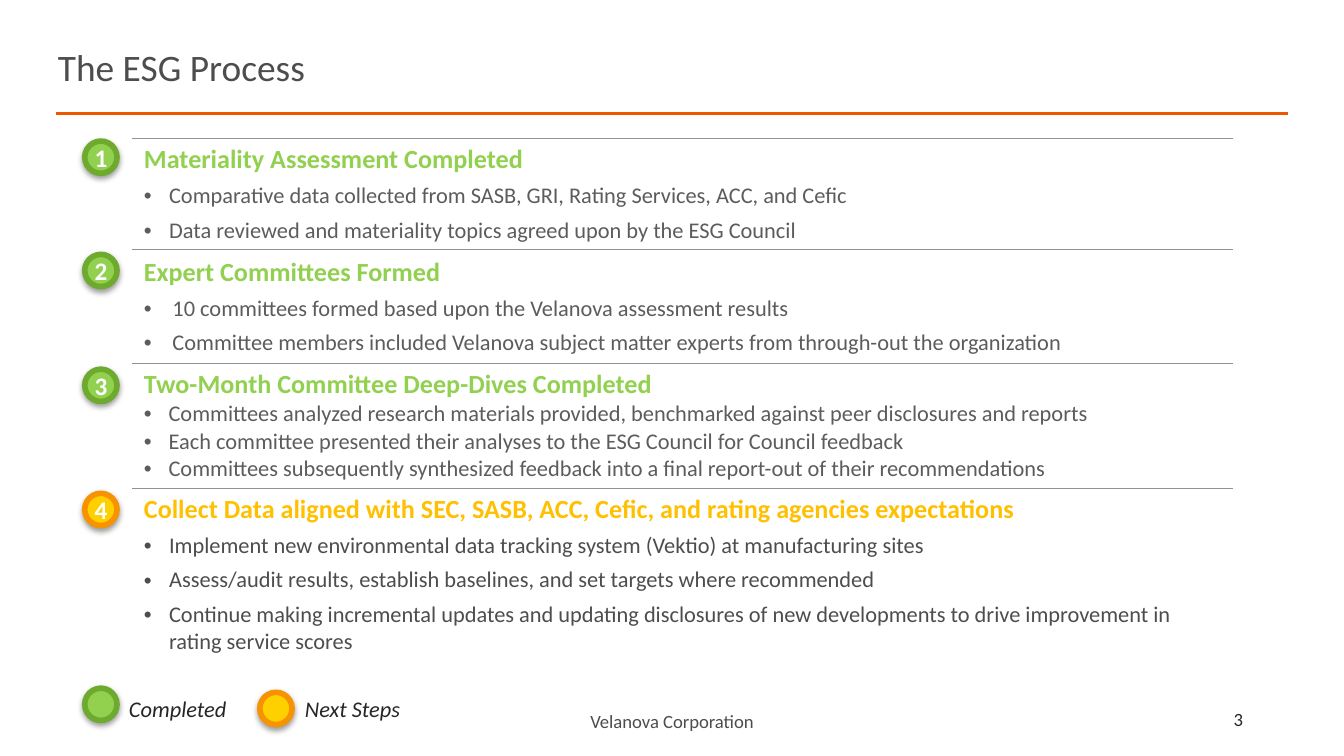
"""Build the ESG process slide with its four steps and legend."""
from dataclasses import dataclass

from lxml.etree import SubElement
from pptx import Presentation
from pptx.dml.color import RGBColor
from pptx.enum.shapes import MSO_CONNECTOR as Connector, MSO_SHAPE as Shape
from pptx.enum.text import MSO_ANCHOR as Anchor, PP_ALIGN as Align
from pptx.oxml import parse_xml
from pptx.oxml.ns import nsdecls, qn
from pptx.util import Pt

GREEN = RGBColor(0x92, 0xD0, 0x50)
DARK_GREEN = RGBColor(0x6E, 0xAA, 0x2E)
YELLOW = RGBColor(0xFF, 0xD0, 0x00)
ORANGE = RGBColor(0xF7, 0x93, 0x00)
AMBER = RGBColor(0xFF, 0xC0, 0x00)
RED_ORANGE = RGBColor(0xF0, 0x55, 0x00)
WHITE = RGBColor(0xFF, 0xFF, 0xFF)
BLACK = RGBColor(0x26, 0x26, 0x26)
DARK_GRAY = RGBColor(0x4D, 0x4D, 0x4D)
GRAY = RGBColor(0x5C, 0x5C, 0x5C)
RULE_GRAY = RGBColor(0x92, 0x92, 0x92)
FONT = "Calibri"
BADGE_LEFT = 45.4
BADGE_SIZE = 17.3


@dataclass(frozen=True)
class Status:
    fill: RGBColor
    outline: RGBColor
    heading: RGBColor


@dataclass(frozen=True)
class Step:
    heading: str
    bullets: tuple[str, ...]
    status: Status
    height: float
    badge_top: float
    indent: float = 13.5
    gap: float = 3.8
    color: RGBColor = GRAY
    anchor: Anchor = Anchor.TOP


@dataclass(frozen=True)
class LegendEntry:
    label: str
    status: Status
    left: float
    top: float
    label_left: float
    label_width: float


COMPLETED = Status(GREEN, DARK_GREEN, GREEN)
NEXT = Status(YELLOW, ORANGE, AMBER)
STEPS = (
    Step("Materiality Assessment Completed",
         ("Comparative data collected from SASB, GRI, Rating Services, ACC, and Cefic",
          "Data reviewed and materiality topics agreed upon by the ESG Council"),
         COMPLETED, 59, 75.6, anchor=Anchor.MIDDLE),
    Step("Expert Committees Formed",
         ("10 committees formed based upon the Velanova assessment results",
          "Committee members included Velanova subject matter experts from through-out the organization"),
         COMPLETED, 61, 136.3, indent=15.3, anchor=Anchor.MIDDLE),
    Step("Two-Month Committee Deep-Dives Completed",
         ("Committees analyzed research materials provided, benchmarked against peer disclosures and reports",
          "Each committee presented their analyses to the ESG Council for Council feedback",
          "Committees subsequently synthesized feedback into a final report-out of their recommendations"),
         COMPLETED, 66, 197.8, indent=13.2, gap=0),
    Step("Collect Data aligned with SEC, SASB, ACC, Cefic, and rating agencies expectations",
         ("Implement new environmental data tracking system (Vektio) at manufacturing sites",
          "Assess/audit results, establish baselines, and set targets where recommended",
          "Continue making incremental updates and updating disclosures of new developments"
          " to drive improvement in rating service scores"),
         NEXT, 92, 264.3, color=DARK_GRAY),
)
LEGEND = (
    LegendEntry("Completed", COMPLETED, BADGE_LEFT, 368.7, 62, 67),
    LegendEntry("Next Steps", NEXT, 139.2, 370.9, 156.3, 66),
)


def write(paragraph, text: str, *, size: float, color: RGBColor, bold: bool = False,
          italic: bool = False, align: Align = Align.LEFT, before: float = 0,
          indent: float = 0) -> None:
    paragraph.alignment = align
    paragraph.space_before = Pt(before)
    if indent:
        properties = paragraph._p.get_or_add_pPr()
        properties.set("marL", str(Pt(indent)))
        properties.set("indent", str(-Pt(indent)))
        SubElement(properties, qn("a:buFont")).set("typeface", "Arial")
        SubElement(properties, qn("a:buChar")).set("char", "•")
    run = paragraph.add_run()
    run.text = text
    font = run.font
    font.name, font.size, font.bold, font.italic = FONT, Pt(size), bold, italic
    font.color.rgb = color


def set_frame(frame, inset: float = 0, wrap: bool = True) -> None:
    frame.margin_left = frame.margin_right = Pt(inset * 2)
    frame.margin_top = frame.margin_bottom = Pt(inset)
    frame.vertical_anchor = Anchor.MIDDLE
    frame.word_wrap = wrap


def add_label(slide, text: str, left: float, top: float, width: float, height: float,
              inset: float = 0, wrap: bool = True, **text_format) -> None:
    box = slide.shapes.add_textbox(Pt(left), Pt(top), Pt(width), Pt(height))
    set_frame(box.text_frame, inset, wrap)
    write(box.text_frame.paragraphs[0], text, **text_format)


def add_badge(slide, left: float, top: float, status: Status, number: str = "") -> None:
    badge = slide.shapes.add_shape(Shape.OVAL, Pt(left), Pt(top), Pt(BADGE_SIZE), Pt(BADGE_SIZE))
    badge.fill.solid()
    badge.fill.fore_color.rgb = status.fill
    badge.line.color.rgb = status.outline
    badge.line.width = Pt(3)
    badge.shadow.inherit = False
    badge._element.spPr.find(qn("a:effectLst")).append(parse_xml(
        f'<a:outerShdw {nsdecls("a")} blurRad="{Pt(3.1)}" dist="{Pt(1.6)}" dir="5400000" '
        'rotWithShape="0"><a:srgbClr val="000000"><a:alpha val="38000"/></a:srgbClr></a:outerShdw>'))
    if number:
        set_frame(badge.text_frame, wrap=False)
        write(badge.text_frame.paragraphs[0], number, size=13.5, color=WHITE, bold=True,
              align=Align.CENTER)


def set_borders(cell, visible: str) -> None:
    properties = cell._tc.get_or_add_tcPr()
    for position, side in enumerate("LRTB"):
        paint = (f'<a:solidFill><a:srgbClr val="{RULE_GRAY}"/></a:solidFill>'
                 if side in visible else "<a:noFill/>")
        properties.insert(position, parse_xml(
            f'<a:ln{side} {nsdecls("a")} w="{Pt(0.25)}">{paint}</a:ln{side}>'))


def fill_cell(cell, step: Step, borders: str) -> None:
    cell.fill.background()
    set_borders(cell, borders)
    cell.margin_left = cell.margin_right = Pt(6.5)
    cell.margin_top = cell.margin_bottom = Pt(2.9)
    cell.vertical_anchor = step.anchor
    frame = cell.text_frame
    write(frame.paragraphs[0], step.heading, size=14, color=step.status.heading, bold=True)
    for bullet in step.bullets:
        write(frame.add_paragraph(), bullet, size=12, color=step.color,
              before=step.gap, indent=step.indent)


def add_steps(slide) -> None:
    table = slide.shapes.add_table(len(STEPS), 1, Pt(70.6), Pt(74), Pt(589.7),
                                   Pt(sum(step.height for step in STEPS))).table
    table.first_row = table.horz_banding = False
    for index, step in enumerate(STEPS):
        table.rows[index].height = Pt(step.height)
        fill_cell(table.cell(index, 0), step, "T" if step is STEPS[-1] else "TB")
        add_badge(slide, BADGE_LEFT, step.badge_top, step.status, str(index + 1))


def add_title(slide, text: str) -> None:
    title = slide.shapes.title
    title.left, title.top, title.width, title.height = Pt(31), Pt(9.4), Pt(365.8), Pt(52.6)
    set_frame(title.text_frame)
    write(title.text_frame.paragraphs[0], text, size=20, color=DARK_GRAY)


def add_rule(slide) -> None:
    rule = slide.shapes.add_connector(Connector.STRAIGHT, Pt(30.2), Pt(61), Pt(689.8), Pt(61))
    rule.line.color.rgb = RED_ORANGE
    rule.line.width = Pt(1.5)
    SubElement(rule._element.spPr, qn("a:effectLst"))


def main() -> None:
    presentation = Presentation()
    presentation.slide_width, presentation.slide_height = Pt(720), Pt(405)
    slide = presentation.slides.add_slide(presentation.slide_layouts[5])
    add_rule(slide)
    add_title(slide, "The ESG Process")
    add_steps(slide)
    for entry in LEGEND:
        add_badge(slide, entry.left, entry.top, entry.status)
        add_label(slide, entry.label, entry.label_left, 368.7, entry.label_width, 21.8,
                  inset=3.6, wrap=False, size=12, color=BLACK, italic=True)
    add_label(slide, "Velanova Corporation", 276.5, 375.5, 167, 21.6, size=10,
              color=DARK_GRAY, align=Align.CENTER)
    add_label(slide, "3", 653.8, 374.5, 36, 21.6, inset=3.6, size=10, color=BLACK)
    presentation.save("out.pptx")


if __name__ == "__main__":
    main()
